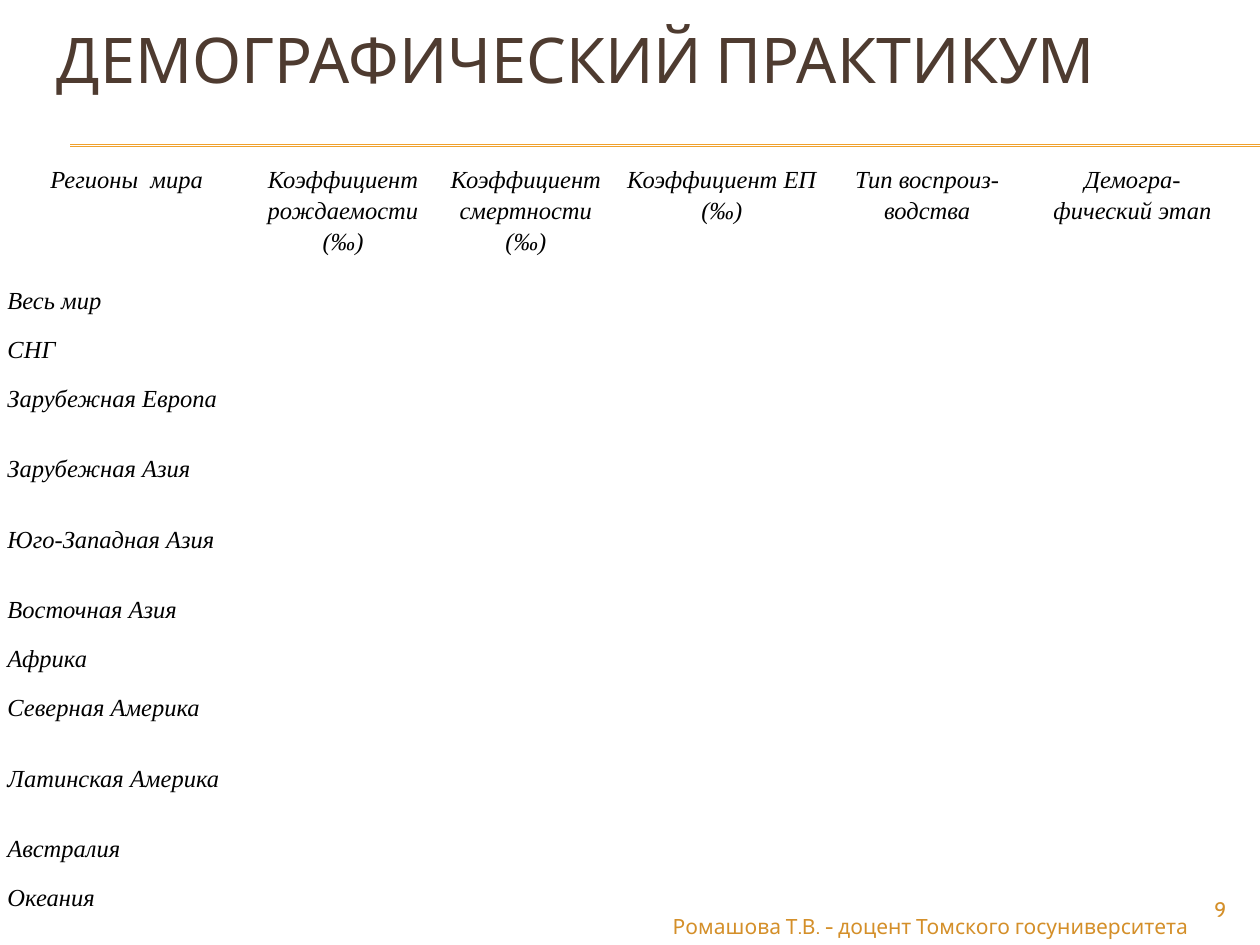
from lxml.etree import SubElement
from pptx import Presentation as Deck
from pptx.dml.color import RGBColor as Rgb
from pptx.enum.shapes import MSO_CONNECTOR as Link
from pptx.enum.text import MSO_ANCHOR as Anchor, PP_ALIGN as Align
from pptx.oxml.ns import qn
from pptx.util import Cm, Pt

HUES = {"title": "4E3B30", "rule": "F0A22E", "foot": "D48F29", "text": "000000"}
HEADS = ["Регионы\u00a0 мира", "Коэффициент рождаемости (‰)",
         "Коэффициент смертности (‰)", "Коэффициент ЕП (‰)",
         "Тип воспроиз-водства", "Демогра-фический этап"]
AREAS = ["Весь мир", "СНГ", "Зарубежная Европа", "Зарубежная Азия",
         "Юго-Западная Азия", "Восточная Азия", "Африка", "Северная Америка",
         "Латинская Америка", "Австралия", "Океания"]
TALL = {"Зарубежная Европа", "Зарубежная Азия", "Юго-Западная Азия",
        "Северная Америка", "Латинская Америка"}
COLS = [5.11, 3.61, 3.76] + [4.14] * 3
ROWS = [2.44] + [1.42 if area in TALL else 0.99 for area in AREAS]

HEAD = {"size": Pt(36), "name": "Cabin"}
FOOT = {"size": Pt(12), "name": "Cabin"}
BODY = {"size": Pt(14), "name": "Times New Roman", "italic": True, "bold": False}


def put(item, form):
    """Set each value of a format on an object."""
    for key, val in form.items():
        setattr(item, key, val)


def write(frame, text, form, hue, align, lead=1.0):
    """Fill a frame with one formatted paragraph."""
    para = frame.paragraphs[0]
    put(para, {"alignment": align, "line_spacing": lead})
    run = para.add_run()
    run.text = text
    put(run.font, form)
    run.font.color.rgb = Rgb.from_string(HUES[hue])


def rule(slide, top):
    """Draw a thin line to the right edge."""
    line = slide.shapes.add_connector(Link.STRAIGHT, Cm(1.42), Cm(top), Cm(25.4), Cm(top))
    line.line.width = Pt(0.75)
    line.line.color.rgb = Rgb.from_string(HUES["rule"])
    SubElement(line._element.spPr, qn("a:effectLst"))


def title(slide, text):
    """Place and format the slide title."""
    head = slide.shapes.title
    put(head, {"left": Cm(0.89), "top": Cm(0), "width": Cm(24.13), "height": Cm(2.34)})
    head.text_frame.vertical_anchor = Anchor.MIDDLE
    write(head.text_frame, text, HEAD, "title", Align.LEFT)


def note(slide, text, *box):
    """Add a right-aligned footer text."""
    frame = slide.shapes.add_textbox(*map(Cm, box)).text_frame
    put(frame, {"word_wrap": True, "vertical_anchor": Anchor.MIDDLE,
                "margin_top": 0, "margin_bottom": 0})
    write(frame, text, FOOT, "foot", Align.RIGHT)


def cell_text(cell, text, align):
    """Format a table cell; blank cells keep no margins."""
    cell.fill.background()
    gap = Cm(0.15 if text else 0)
    put(cell, {"margin_" + side: gap for side in ("left", "right", "top", "bottom")})
    if text:
        write(cell.text_frame, text, BODY, "text", align, 1.15)


def grid(slide):
    """Build the table of world regions."""
    table = slide.shapes.add_table(len(ROWS), len(COLS), Cm(0), Cm(3.12),
                                   Cm(sum(COLS)), Cm(sum(ROWS))).table
    put(table, {"first_row": False, "horz_banding": False})
    for col, width in zip(table.columns, COLS):
        col.width = Cm(width)
    for row, height in zip(table.rows, ROWS):
        row.height = Cm(height)
    blank = [""] * (len(COLS) - 1)
    for num, words in enumerate([HEADS] + [[area] + blank for area in AREAS]):
        for col, word in enumerate(words):
            cell_text(table.cell(num, col), word, Align.JUSTIFY if num else Align.CENTER)


def main():
    deck = Deck()
    put(deck, {"slide_width": Cm(25.4), "slide_height": Cm(19.05)})
    slide = deck.slides.add_slide(deck.slide_layouts[5])
    # Header
    for top in (2.92, 2.95):
        rule(slide, top)
    title(slide, "ДЕМОГРАФИЧЕСКИЙ ПРАКТИКУМ")
    # Table
    grid(slide)
    # Footer
    note(slide, "9", 22.86, 17.98, 2.11, 0.69)
    note(slide, "Ромашова Т.В. - доцент Томского госуниверситета ", 12.7, 18.31, 11.61, 0.74)
    deck.save("out.pptx")


main()
